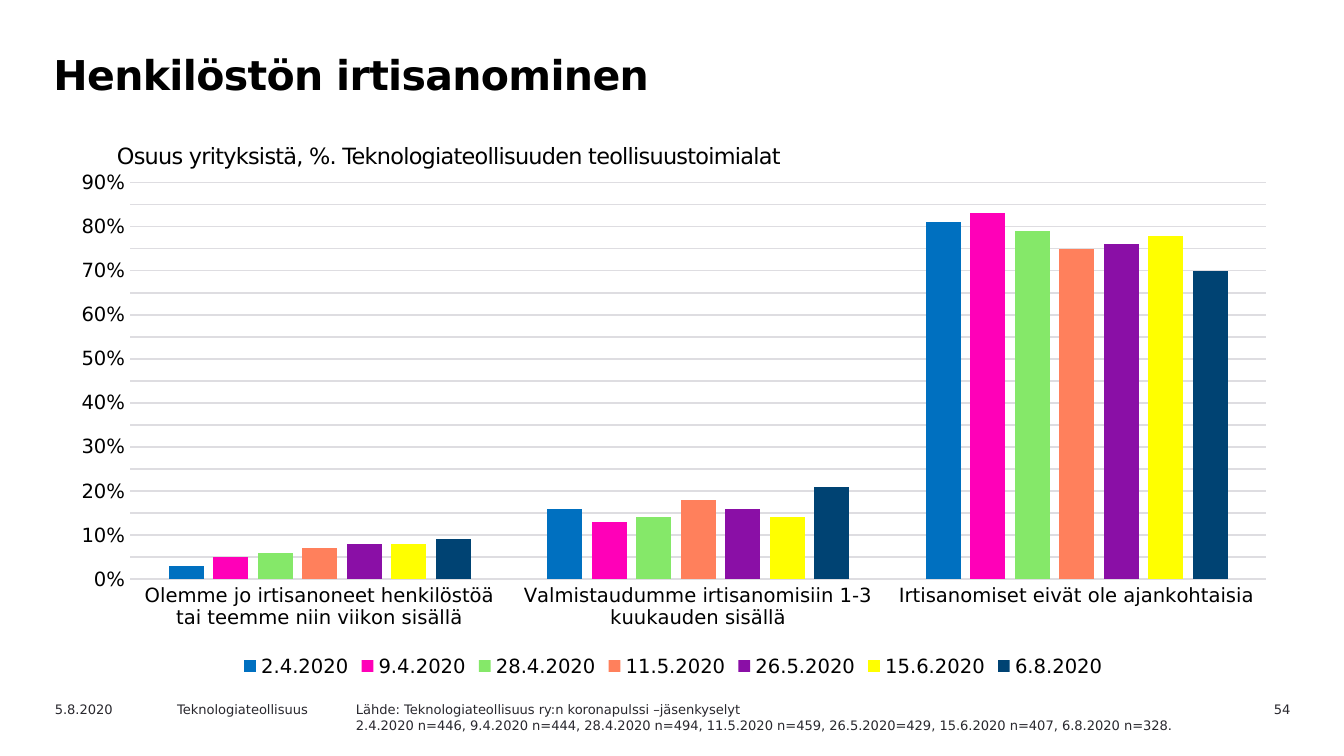
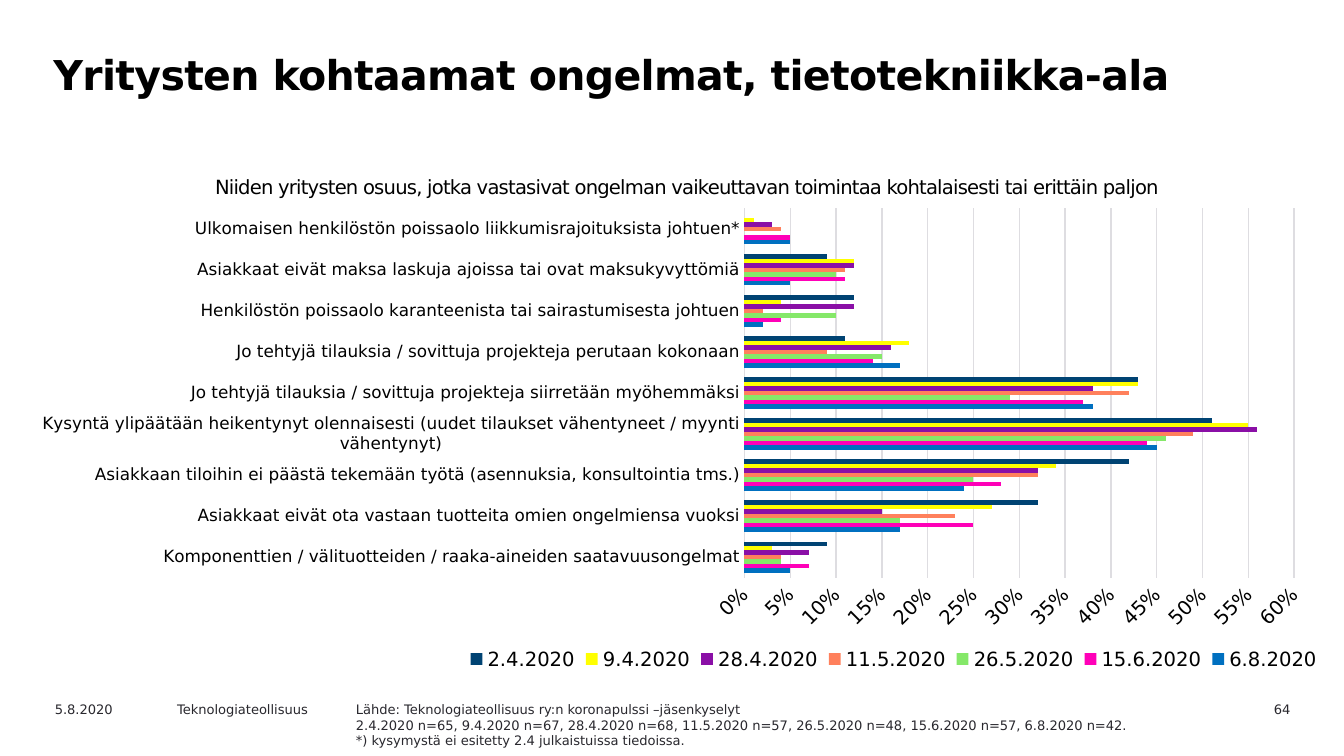
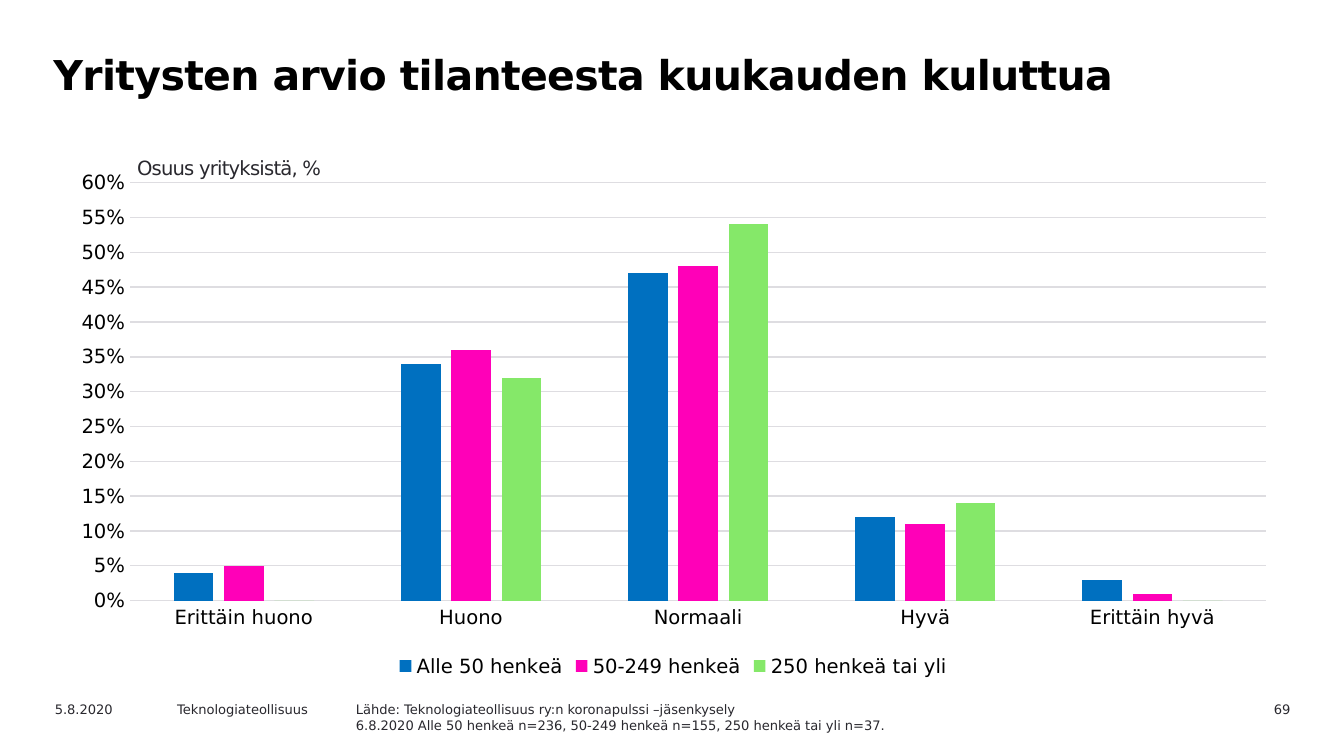
from lxml import etree
from pptx import Presentation
from pptx.chart.data import CategoryChartData
from pptx.dml.color import RGBColor
from pptx.enum import chart as ch, text
from pptx.oxml import parse_xml
from pptx.oxml.ns import nsdecls, qn
from pptx.util import Inches, Pt

FONT = "DejaVu Sans"
BLACK, GRAY, GRID = "000000", "29282E", "DEDDE1"
BLUE, PINK, GREEN, ORANGE = "0070C0", "FF00B8", "85E869", "FF805C"
PURPLE, YELLOW, NAVY = "8A0FA6", "FFFF00", "004373"
DATE, PUBLISHER = "5.8.2020", "Teknologiateollisuus"

COLUMN = dict(kind=ch.XL_CHART_TYPE.COLUMN_CLUSTERED, box=(0.42, 1.21, 9.18, 3.87),
              overlap=-27, cat_size=10.5)
BAR = dict(kind=ch.XL_CHART_TYPE.BAR_CLUSTERED, box=(0.12, 1.47, 9.76, 3.61),
           overlap=0, cat_size=9)

# Slide content; plot and legend areas are in inches on the slide
SLIDES = [
    dict(
        title="Henkilöstön irtisanominen", page="54",
        caption=("Osuus yrityksistä, %. Teknologiateollisuuden teollisuustoimialat",
                 (0.83, 1.02, 6.3, 0.28), 12, BLACK),
        source_size=(6.62, 0.4),
        source=["Lähde: Teknologiateollisuus ry:n koronapulssi –jäsenkyselyt",
                "2.4.2020 n=446, 9.4.2020 n=444, 28.4.2020 n=494, 11.5.2020 n=459, "
                "26.5.2020=429, 15.6.2020 n=407, 6.8.2020 n=328."],
        style=COLUMN, maximum=0.9, plot=(0.97, 1.36, 8.45, 2.95),
        categories=["Olemme jo irtisanoneet henkilöstöä tai teemme niin viikon sisällä",
                    "Valmistaudumme irtisanomisiin 1-3 kuukauden sisällä",
                    "Irtisanomiset eivät ole ajankohtaisia"],
        series=[("2.4.2020", BLUE, (0.03, 0.16, 0.81)),
                ("9.4.2020", PINK, (0.05, 0.13, 0.83)),
                ("28.4.2020", GREEN, (0.06, 0.14, 0.79)),
                ("11.5.2020", ORANGE, (0.07, 0.18, 0.75)),
                ("26.5.2020", PURPLE, (0.08, 0.16, 0.76)),
                ("15.6.2020", YELLOW, (0.08, 0.14, 0.78)),
                ("6.8.2020", NAVY, (0.09, 0.21, 0.7))],
    ),
    dict(
        title="Yritysten kohtaamat ongelmat, tietotekniikka-ala", page="64",
        caption=("Niiden yritysten osuus, jotka vastasivat ongelman vaikeuttavan "
                 "toimintaa kohtalaisesti tai erittäin paljon",
                 (1.56, 1.26, 7.45, 0.26), 10.5, BLACK),
        source_size=(6.86, 0.37),
        source=["Lähde: Teknologiateollisuus ry:n koronapulssi –jäsenkyselyt",
                "2.4.2020 n=65, 9.4.2020 n=67, 28.4.2020 n=68, 11.5.2020 n=57, "
                "26.5.2020 n=48, 15.6.2020 n=57, 6.8.2020 n=42.",
                "*) kysymystä ei esitetty 2.4 julkaistuissa tiedoissa."],
        style=BAR, maximum=0.6, plot=(5.54, 1.55, 4.09, 2.75),
        legend=(3.42, 4.78, 6.46, 0.25), tilt=-45,
        categories=["Komponenttien / välituotteiden / raaka-aineiden saatavuusongelmat",
                    "Asiakkaat eivät ota vastaan tuotteita omien ongelmiensa vuoksi",
                    "Asiakkaan tiloihin ei päästä tekemään työtä (asennuksia, konsultointia tms.)",
                    "Kysyntä ylipäätään heikentynyt olennaisesti (uudet tilaukset "
                    "vähentyneet / myynti vähentynyt)",
                    "Jo tehtyjä tilauksia / sovittuja projekteja siirretään myöhemmäksi",
                    "Jo tehtyjä tilauksia / sovittuja projekteja perutaan kokonaan",
                    "Henkilöstön poissaolo karanteenista tai sairastumisesta johtuen",
                    "Asiakkaat eivät maksa laskuja ajoissa tai ovat maksukyvyttömiä",
                    "Ulkomaisen henkilöstön poissaolo liikkumisrajoituksista johtuen*"],
        series=[("6.8.2020", BLUE, (0.05, 0.17, 0.24, 0.45, 0.38, 0.17, 0.02, 0.05, 0.05)),
                ("15.6.2020", PINK, (0.07, 0.25, 0.28, 0.44, 0.37, 0.14, 0.04, 0.11, 0.05)),
                ("26.5.2020", GREEN, (0.04, 0.17, 0.25, 0.46, 0.29, 0.15, 0.1, 0.1, 0)),
                ("11.5.2020", ORANGE, (0.04, 0.23, 0.32, 0.49, 0.42, 0.09, 0.02, 0.11, 0.04)),
                ("28.4.2020", PURPLE, (0.07, 0.15, 0.32, 0.56, 0.38, 0.16, 0.12, 0.12, 0.03)),
                ("9.4.2020", YELLOW, (0.03, 0.27, 0.34, 0.55, 0.43, 0.18, 0.04, 0.12, 0.01)),
                ("2.4.2020", NAVY, (0.09, 0.32, 0.42, 0.51, 0.43, 0.11, 0.12, 0.09, None))],
    ),
    dict(
        title="Yritysten arvio tilanteesta kuukauden kuluttua", page="69",
        caption=("Osuus yrityksistä, %", (0.98, 1.12, 3.39, 0.26), 10.5, GRAY),
        source_size=(4.57, 0.32),
        source=["Lähde: Teknologiateollisuus ry:n koronapulssi –jäsenkysely",
                "6.8.2020 Alle 50 henkeä n=236, 50-249 henkeä n=155, 250 henkeä tai yli n=37."],
        style=COLUMN, maximum=0.6, plot=(0.97, 1.36, 8.45, 3.11),
        categories=["Erittäin huono", "Huono", "Normaali", "Hyvä", "Erittäin hyvä"],
        series=[("Alle 50 henkeä", BLUE, (0.04, 0.34, 0.47, 0.12, 0.03)),
                ("50-249 henkeä", PINK, (0.05, 0.36, 0.48, 0.11, 0.01)),
                ("250 henkeä tai yli", GREEN, (0, 0.32, 0.54, 0.14, 0))],
    ),
]


def rgb(color):
    return RGBColor.from_string(color)


def set_font(font, size, color):
    font.name, font.size = FONT, Pt(size)
    font.color.rgb = rgb(color)


def add_text(slide, box, lines, size=7, color=GRAY, bold=False, spacing=0, align=None):
    """Add a wrapped text box; spacing is between letters, in points."""
    shape = slide.shapes.add_textbox(*map(Inches, box))
    frame = shape.text_frame
    frame.word_wrap = True
    frame.text = "\n".join(lines)
    for paragraph in frame.paragraphs:
        if align is not None:
            paragraph.alignment = align
        set_font(paragraph.font, size, color)
        paragraph.font.bold = bold
        if spacing:
            for run in paragraph.runs:
                run._r.get_or_add_rPr().set("spc", str(round(spacing * 100)))
    return frame


def add_title(slide, title):
    frame = add_text(slide, (0.28, 0.31, 8.74, 0.71), [title], 22, BLACK, True, -0.35)
    line = frame.paragraphs[0]
    line.line_spacing = Pt(27)
    line._p.get_or_add_pPr().set("marL", str(Inches(0.02)))


def add_caption(slide, wording, box, size, color):
    frame = add_text(slide, box, [wording], size, color, spacing=-0.4)
    frame.margin_left = frame.margin_right = Inches(0.04)
    frame.margin_top = frame.margin_bottom = Inches(0.04)
    frame.auto_size = text.MSO_AUTO_SIZE.SHAPE_TO_FIT_TEXT


def add_footer(slide, content):
    top = 5.17
    add_text(slide, (8.76, top, 0.94, 0.18), [content["page"]], align=text.PP_ALIGN.RIGHT)
    add_text(slide, (0.31, top, 1, 0.18), [DATE])
    add_text(slide, (1.22, top, 1.42, 0.18), [PUBLISHER])
    add_text(slide, (2.55, top, *content["source_size"]), content["source"])


def place(part, area, chart_box, before, inner=False):
    """Fix a chart part's area, putting its layout ahead of the named child."""
    for old in part.findall(qn("c:layout")):
        part.remove(old)
    left, top, width, height = chart_box
    x, y, w, h = area
    shares = ((x - left) / width, (y - top) / height, w / width, h / height)
    layout = parse_xml(f"<c:layout {nsdecls('c')}><c:manualLayout/></c:layout>")
    settings = [("layoutTarget", "inner")] if inner else []
    settings += [("xMode", "edge"), ("yMode", "edge"), *zip("xywh", shares)]
    for tag, value in settings:
        etree.SubElement(layout[0], qn(f"c:{tag}")).set("val", str(value))
    part.find(qn(before)).addprevious(layout)


def style_line(line, color):
    line.color.rgb = rgb(color)
    line.width = Pt(0.75)


def add_bars(slide, content):
    style = content["style"]
    data = CategoryChartData(number_format="0%")
    data.categories = content["categories"]
    for name, _, values in content["series"]:
        data.add_series(name, values)
    chart = slide.shapes.add_chart(style["kind"], *map(Inches, style["box"]), data).chart
    chart.has_title = False
    set_font(chart.font, 10, GRAY)

    # Bars
    bars = chart.plots[0]
    bars.gap_width, bars.overlap = 219, style["overlap"]
    bars.vary_by_categories = False
    for series, (_, color, _) in zip(bars.series, content["series"]):
        series.invert_if_negative = False
        series.format.fill.solid()
        series.format.fill.fore_color.rgb = rgb(color)

    # Axes
    shares, answers = chart.value_axis, chart.category_axis
    for axis, size in ((answers, style["cat_size"]), (shares, 10.5)):
        axis.major_tick_mark = axis.minor_tick_mark = ch.XL_TICK_MARK.NONE
        set_font(axis.tick_labels.font, size, BLACK)
    style_line(answers.format.line, GRID)
    shares.format.line.fill.background()
    shares.has_major_gridlines = True
    style_line(shares.major_gridlines.format.line, GRID)
    shares.minimum_scale, shares.maximum_scale = 0, content["maximum"]
    shares.major_unit = 0.05
    shares.tick_labels.number_format = "0%"
    shares.tick_labels.number_format_is_linked = False
    if "tilt" in content:
        body = shares._element.find(qn("c:txPr")).find(qn("a:bodyPr"))
        body.set("rot", str(content["tilt"] * 60000))
        body.set("vert", "horz")

    # Legend and plot area
    chart.has_legend = True
    legend = chart.legend
    legend.position = ch.XL_LEGEND_POSITION.BOTTOM
    legend.include_in_layout = False
    set_font(legend.font, 10.5, BLACK)
    if "legend" in content:
        place(legend._element, content["legend"], style["box"], "c:overlay")
    plot_area = chart._chartSpace.find(qn("c:chart")).find(qn("c:plotArea"))
    place(plot_area, content["plot"], style["box"], "c:barChart", inner=True)


def main():
    deck = Presentation()
    deck.slide_width = Inches(10)
    deck.slide_height = deck.slide_width * 9 // 16
    for content in SLIDES:
        slide = deck.slides.add_slide(deck.slide_layouts[6])
        add_title(slide, content["title"])
        add_bars(slide, content)
        add_footer(slide, content)
        add_caption(slide, *content["caption"])
    deck.save("out.pptx")


if __name__ == "__main__":
    main()
